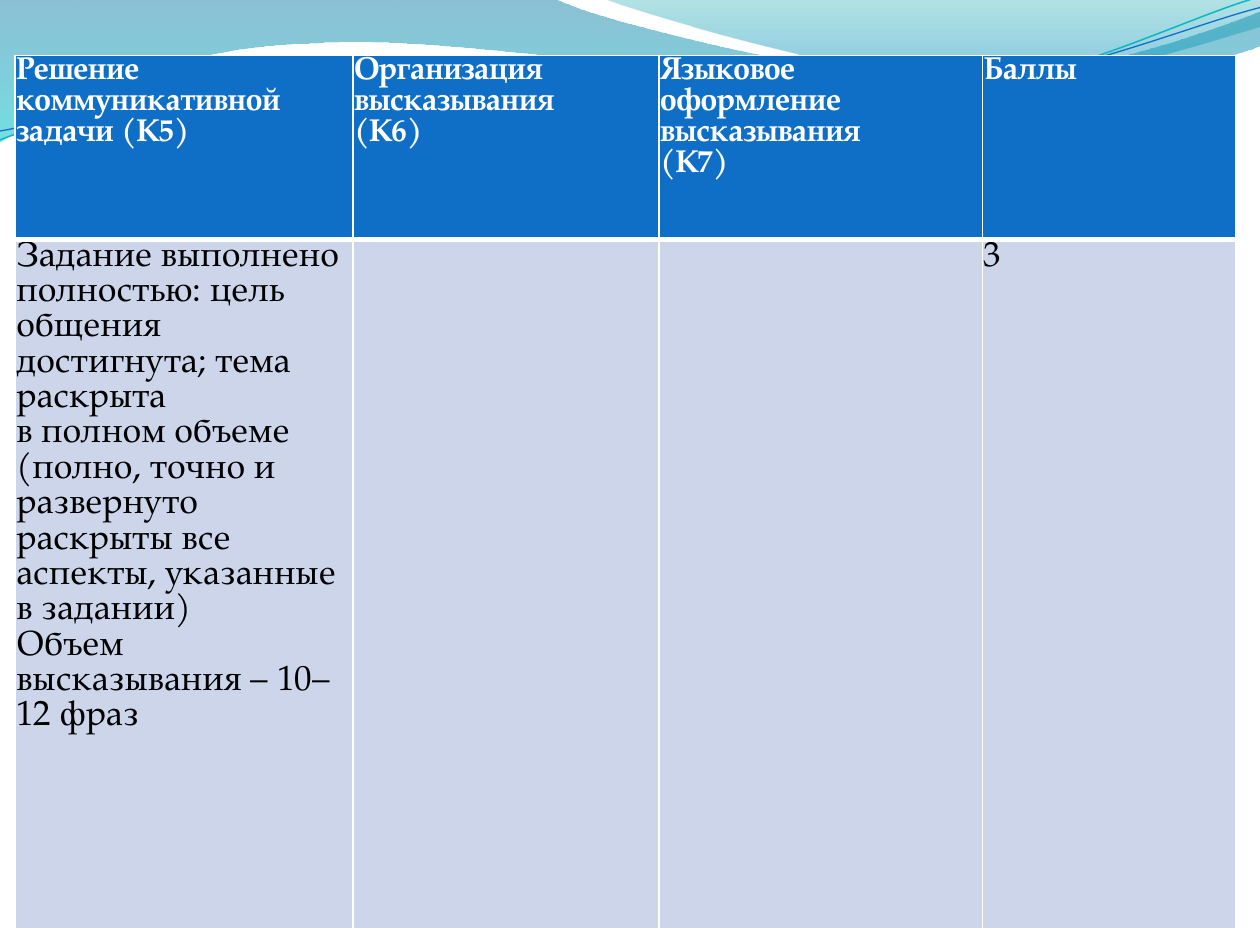
from dataclasses import dataclass

from lxml.etree import SubElement
from pptx import Presentation
from pptx.dml.color import RGBColor
from pptx.oxml.ns import qn
from pptx.util import Inches, Pt


@dataclass(frozen=True)
class TextStyle:
    size: float
    leading: float
    color: str
    bold: bool


@dataclass(frozen=True)
class Theme:
    font: str = "TeX Gyre Pagella"
    border: str = "FFFFFF"
    header_fill: str = "0F6FC6"
    body_fill: str = "CCD5EA"
    header: TextStyle = TextStyle(18, 17.7, "FFFFFF", True)
    body: TextStyle = TextStyle(20, 20.2, "000000", False)


@dataclass(frozen=True)
class GradientStop:
    position: float
    color: str
    opacity: int


@dataclass(frozen=True)
class Outline:
    start: tuple[float, float]
    segments: tuple[tuple[float, ...], ...]


@dataclass(frozen=True)
class Wave:
    outline: Outline
    stops: tuple[GradientStop, GradientStop]


@dataclass(frozen=True)
class Strand:
    outline: Outline
    color: str
    width: float


THEME = Theme()

WAVES = (
    Wave(
        Outline((0, 0), (
            (4.4, -0.01),
            (4.76, 0.17, 6.64, 0.63, 7.58, 0.63),
            (8.53, 0.63, 9.58, 0.26, 10, 0.09),
            (10.01, 0.36),
            (9.83, 0.44, 8.7, 0.76, 7.46, 0.75),
            (6.22, 0.75, 3.82, 0.28, 2.57, 0.34),
            (1.29, 0.36, 0.46, 0.83, -0.01, 1.13),
            (0, 0),
        )),
        (GradientStop(0, "0074A1", 45), GradientStop(1, "00C6CF", 55)),
    ),
    Wave(
        Outline((4.79, -0.01), (
            (5.09, 0.11, 6.82, 0.62, 7.69, 0.65),
            (8.56, 0.69, 9.61, 0.32, 10, 0.21),
            (10, 0),
            (4.79, -0.01),
        )),
        (GradientStop(0, "00A1A9", 30), GradientStop(0.8, "008BBF", 45)),
    ),
)
STRANDS = (
    Strand(
        Outline((0, 1.11), (
            (0.48, 0.93, 1.58, 0.57, 2.77, 0.52),
            (3.95, 0.47, 5.93, 0.89, 7.13, 0.8),
            (8.33, 0.71, 9.38, 0.15, 9.98, -0.02),
        )),
        "0AB8BF", 0.85,
    ),
    Strand(
        Outline((0, 1.04), (
            (0.47, 0.96, 1.64, 0.61, 2.83, 0.56),
            (4.03, 0.51, 5.97, 0.84, 7.17, 0.75),
            (8.36, 0.67, 9.41, 0.21, 10, 0.06),
        )),
        "0F6FC6", 0.75,
    ),
)
COLUMN_WIDTHS = (2.68, 2.43, 2.57, 2.01)
ROW_HEIGHTS = (1.46, 5.47)
HEADERS = (
    "Решение \vкоммуникативной \vзадачи (К5)",
    "Организация \vвысказывания \v(К6)",
    "Языковое оформление \vвысказывания \v(К7)",
    "Баллы",
)
CRITERIA = (
    "Задание выполнено полностью: цель общения достигнута; тема раскрыта \v"
    "в полном объеме (полно, точно и развернуто раскрыты все аспекты, "
    "указанные в задании)\nОбъем высказывания – 10–12 фраз",
    "",
    "",
    "3",
)


def draw_outline(shapes, outline: Outline, close: bool):
    """Add a freeform whose six-number segments are cubic curves."""
    points = [
        (Inches(segment[index]), Inches(segment[index + 1]))
        for segment in outline.segments
        for index in range(0, len(segment), 2)
    ]
    builder = shapes.build_freeform(*map(Inches, outline.start))
    builder.add_line_segments(points, close=close)
    shape = builder.convert_to_shape()
    shape.shadow.inherit = False
    geometry = next(shape.element.iter(qn("a:path")))
    lines = iter(geometry.findall(qn("a:lnTo")))
    for segment in outline.segments:
        members = [next(lines) for _ in range(len(segment) // 2)]
        if len(members) == 3:
            curve = SubElement(geometry, qn("a:cubicBezTo"))
            members[0].addprevious(curve)
            for member in members:
                curve.append(member[0])
                geometry.remove(member)
    return shape


def draw_wave(shapes, wave: Wave) -> None:
    """Add a translucent band with a vertical gradient."""
    shape = draw_outline(shapes, wave.outline, True)
    shape.line.fill.background()
    shape.fill.gradient()
    shape.fill.gradient_angle = 270
    for target, stop in zip(shape.fill.gradient_stops, wave.stops):
        target.position = stop.position
        target.color.rgb = RGBColor.from_string(stop.color)
    for color, stop in zip(shape.element.spPr.iter(qn("a:srgbClr")), wave.stops):
        SubElement(color, qn("a:alpha"), val=str(stop.opacity * 1000))


def draw_strand(shapes, strand: Strand) -> None:
    """Add a thin open curve."""
    shape = draw_outline(shapes, strand.outline, False)
    shape.fill.background()
    shape.line.color.rgb = RGBColor.from_string(strand.color)
    shape.line.width = Pt(strand.width)


def set_borders(cell, bottom: float) -> None:
    """Give the cell thin borders and a bottom border of its own width."""
    properties = cell._tc.get_or_add_tcPr()
    widths = {"a:lnL": 1, "a:lnR": 1, "a:lnT": 1, "a:lnB": bottom}
    for index, (tag, width) in enumerate(widths.items()):
        line = SubElement(properties, qn(tag), w=str(Pt(width)))
        fill = SubElement(line, qn("a:solidFill"))
        SubElement(fill, qn("a:srgbClr"), val=THEME.border)
        properties.insert(index, line)


def fill_cell(cell, text: str, style: TextStyle, fill: str, bottom: float) -> None:
    """Write and format one table cell."""
    cell.fill.solid()
    cell.fill.fore_color.rgb = RGBColor.from_string(fill)
    cell.margin_left = cell.margin_top = cell.margin_right = Inches(0.01)
    cell.margin_bottom = 0
    set_borders(cell, bottom)
    cell.text_frame.text = text
    for paragraph in cell.text_frame.paragraphs:
        paragraph.line_spacing = Pt(style.leading)
        for run in paragraph.runs:
            run.font.name = THEME.font
            run.font.size = Pt(style.size)
            run.font.bold = style.bold
            run.font.color.rgb = RGBColor.from_string(style.color)


def draw_criteria_table(slide) -> None:
    """Add the table of assessment criteria."""
    table = slide.shapes.add_table(
        len(ROW_HEIGHTS), len(COLUMN_WIDTHS), Inches(0.12), Inches(0.44),
        Inches(sum(COLUMN_WIDTHS)), Inches(sum(ROW_HEIGHTS)),
    ).table
    for column, width in zip(table.columns, COLUMN_WIDTHS):
        column.width = Inches(width)
    for row, height in zip(table.rows, ROW_HEIGHTS):
        row.height = Inches(height)
    for index, (header, criterion) in enumerate(zip(HEADERS, CRITERIA)):
        fill_cell(table.cell(0, index), header, THEME.header, THEME.header_fill, 3)
        fill_cell(table.cell(1, index), criterion, THEME.body, THEME.body_fill, 1)


def main() -> None:
    """Build the slide and save it."""
    presentation = Presentation()
    presentation.slide_width, presentation.slide_height = Inches(10), Inches(7.5)
    slide = presentation.slides.add_slide(presentation.slide_layouts[6])
    for wave in WAVES:
        draw_wave(slide.shapes, wave)
    strand_group = slide.shapes.add_group_shape()
    for strand in STRANDS:
        draw_strand(strand_group.shapes, strand)
    draw_criteria_table(slide)
    presentation.save("out.pptx")


if __name__ == "__main__":
    main()
